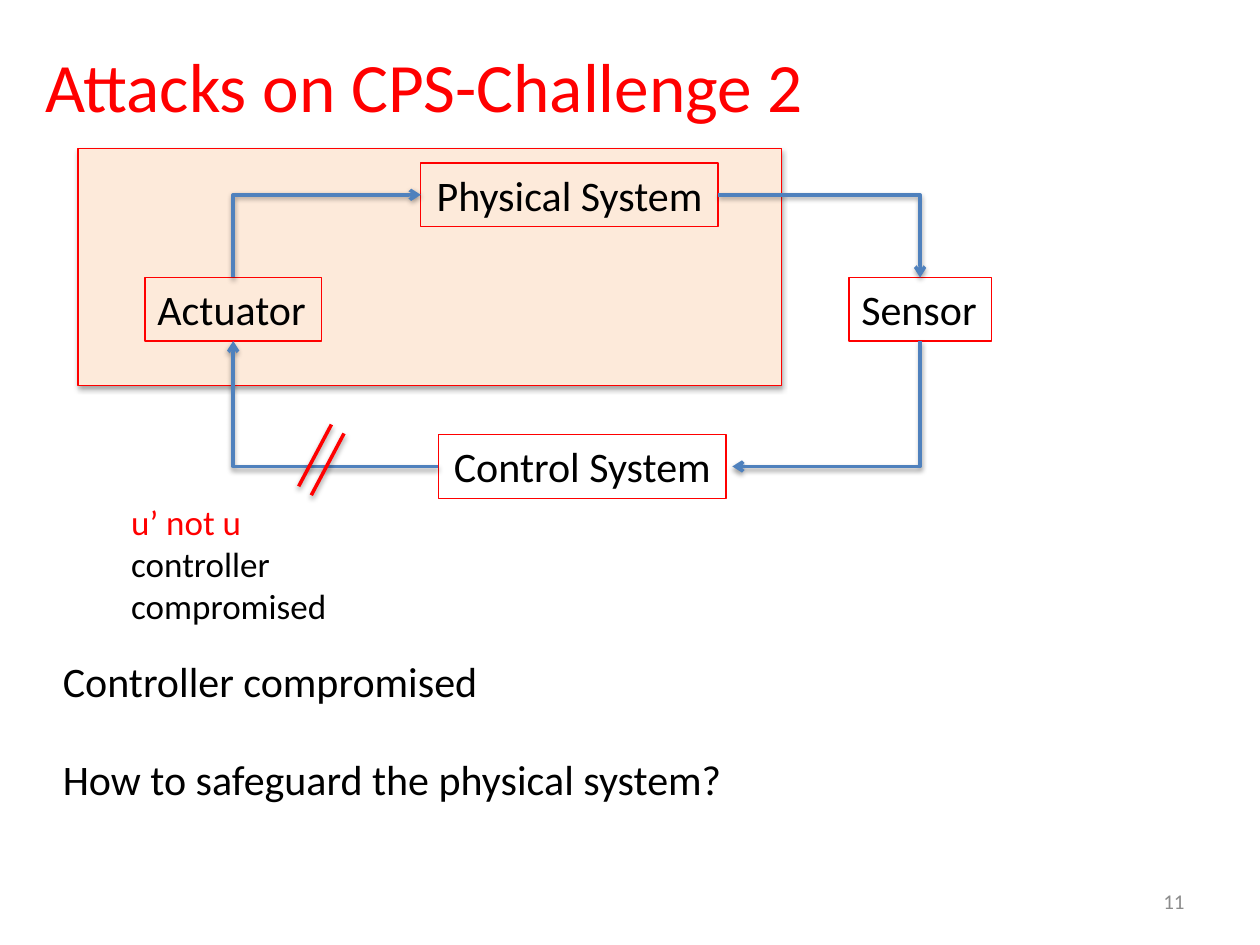
from lxml.etree import SubElement
from pptx import Presentation
from pptx.dml.color import RGBColor
from pptx.enum.shapes import MSO_CONNECTOR as Connector, MSO_SHAPE as Shape
from pptx.enum.text import MSO_ANCHOR as Anchor, PP_ALIGN as Align
from pptx.oxml.ns import qn
from pptx.util import Pt

RED = RGBColor(0xFF, 0x00, 0x00)
BLACK = RGBColor(0x00, 0x00, 0x00)
BLUE = RGBColor(0x4F, 0x81, 0xBD)
PEACH = RGBColor(0xFD, 0xEA, 0xDA)
GRAY = RGBColor(0x8C, 0x8C, 0x8C)
FONT = "Calibri"

ZONE = (44.64, 84.96, 401.76, 135.36)
BOX_HEIGHT = 36.3
BOXES = {
    "Physical System": (240.5, 93.2, 169.9, Align.CENTER),
    "Sensor": (485.1, 158.6, 81.4, Align.LEFT),
    "Control System": (250.6, 248.4, 164.2, Align.CENTER),
    "Actuator": (82.9, 158.6, 100.8, Align.LEFT),
}
TITLE = ([("Attacks on CPS-Challenge 2", RED)],
         (18.72, 12.24, 475.92, 72.72), 39.6, Align.LEFT, Anchor.MIDDLE, True)
LABELS = [
    ([("11", GRAY)], (516.24, 500.4, 167.76, 28.8), 12, Align.RIGHT, Anchor.MIDDLE, True),
    ([("Controller compromised", BLACK)],
     (28.8, 370.8, 254.88, 36.3), 24, Align.LEFT, Anchor.TOP, False),
    ([("How to safeguard the physical system?", BLACK)],
     (28.8, 427.3, 398.16, 36.3), 24, Align.LEFT, Anchor.TOP, False),
    ([("u’ not u", RED), ("controller", BLACK), ("compromised", BLACK)],
     (67.9, 282.4, 127.44, 79.9), 20, Align.LEFT, Anchor.TOP, False),
]
ARROW_GAP = 3.7
BREAK_MARKS = [(189.4, 242.6), (196.6, 247.7)]
BREAK_SIZE = (-18.7, 35.3)


def write(shape, lines, size, align, anchor, wrap):
    frame = shape.text_frame
    frame.word_wrap = wrap
    frame.vertical_anchor = anchor
    for index, (text, color) in enumerate(lines):
        paragraph = frame.paragraphs[0] if index == 0 else frame.add_paragraph()
        paragraph.text = text
        paragraph.alignment = align
        paragraph.font.name = FONT
        paragraph.font.size = Pt(size)
        paragraph.font.color.rgb = color


def add_label(slide, lines, place, *style):
    write(slide.shapes.add_textbox(*map(Pt, place)), lines, *style)


def add_shadow(shape, opacity, distance):
    properties = shape._element.spPr
    for old in properties.findall(qn("a:effectLst")):
        properties.remove(old)
    effects = SubElement(properties, qn("a:effectLst"))
    shadow = SubElement(effects, qn("a:outerShdw"), blurRad=str(Pt(3.1)),
                        dist=str(Pt(distance)), dir="5400000", rotWithShape="0")
    color = SubElement(shadow, qn("a:srgbClr"), val=str(BLACK))
    SubElement(color, qn("a:alpha"), val=str(opacity * 1000))


def add_rectangle(slide, place, fill=None):
    shape = slide.shapes.add_shape(Shape.RECTANGLE, *map(Pt, place))
    shape.shadow.inherit = False
    if fill is None:
        shape.fill.background()
    else:
        shape.fill.solid()
        shape.fill.fore_color.rgb = fill
    shape.line.color.rgb = RED
    shape.line.width = Pt(0.75)
    return shape


def add_line(slide, kind, start, end, color):
    line = slide.shapes.add_connector(kind, *map(Pt, start + end))
    line.line.color.rgb = color
    line.line.width = Pt(2)
    add_shadow(line, 38, 1.6)
    return line


def add_bent_arrow(slide, start, end, vertical_first):
    if vertical_first:
        center_x, center_y = (start[0] + end[0]) / 2, (start[1] + end[1]) / 2
        half_x, half_y = (end[0] - start[0]) / 2, (end[1] - start[1]) / 2
        start = (center_x - half_y, center_y + half_x)
        end = (center_x + half_y, center_y - half_x)
    arrow = add_line(slide, Connector.ELBOW, start, end, BLUE)
    properties = arrow._element.spPr
    properties.find(qn("a:prstGeom")).set("prst", "bentConnector2")
    if vertical_first:
        properties.find(qn("a:xfrm")).set("rot", "5400000")
    SubElement(properties.find(qn("a:ln")), qn("a:tailEnd"), type="arrow")


def side(name, across, down):
    left, top, width, _ = BOXES[name]
    return left + width * across, top + BOX_HEIGHT * down


def main():
    presentation = Presentation()
    presentation.slide_width, presentation.slide_height = Pt(720), Pt(540)
    slide = presentation.slides.add_slide(presentation.slide_layouts[6])

    add_shadow(add_rectangle(slide, ZONE, PEACH), 35, 1.8)
    add_label(slide, *TITLE)
    for name, (left, top, width, align) in BOXES.items():
        box = add_rectangle(slide, (left, top, width, BOX_HEIGHT))
        write(box, [(name, BLACK)], 24, align, Anchor.TOP, False)

    control_right, control_middle = side("Control System", 1, 0.5)
    arrows = [
        (side("Sensor", 0.5, 1), (control_right + ARROW_GAP, control_middle), True),
        (side("Physical System", 1, 0.5), side("Sensor", 0.5, 0), False),
        (side("Control System", 0, 0.5), side("Actuator", 0.5, 1), False),
        (side("Actuator", 0.5, 0), side("Physical System", 0, 0.5), True),
    ]
    for arrow in arrows:
        add_bent_arrow(slide, *arrow)

    for label in LABELS:
        add_label(slide, *label)
    for x, y in BREAK_MARKS:
        add_line(slide, Connector.STRAIGHT, (x, y),
                 (x + BREAK_SIZE[0], y + BREAK_SIZE[1]), RED)

    presentation.save("out.pptx")


if __name__ == "__main__":
    main()
